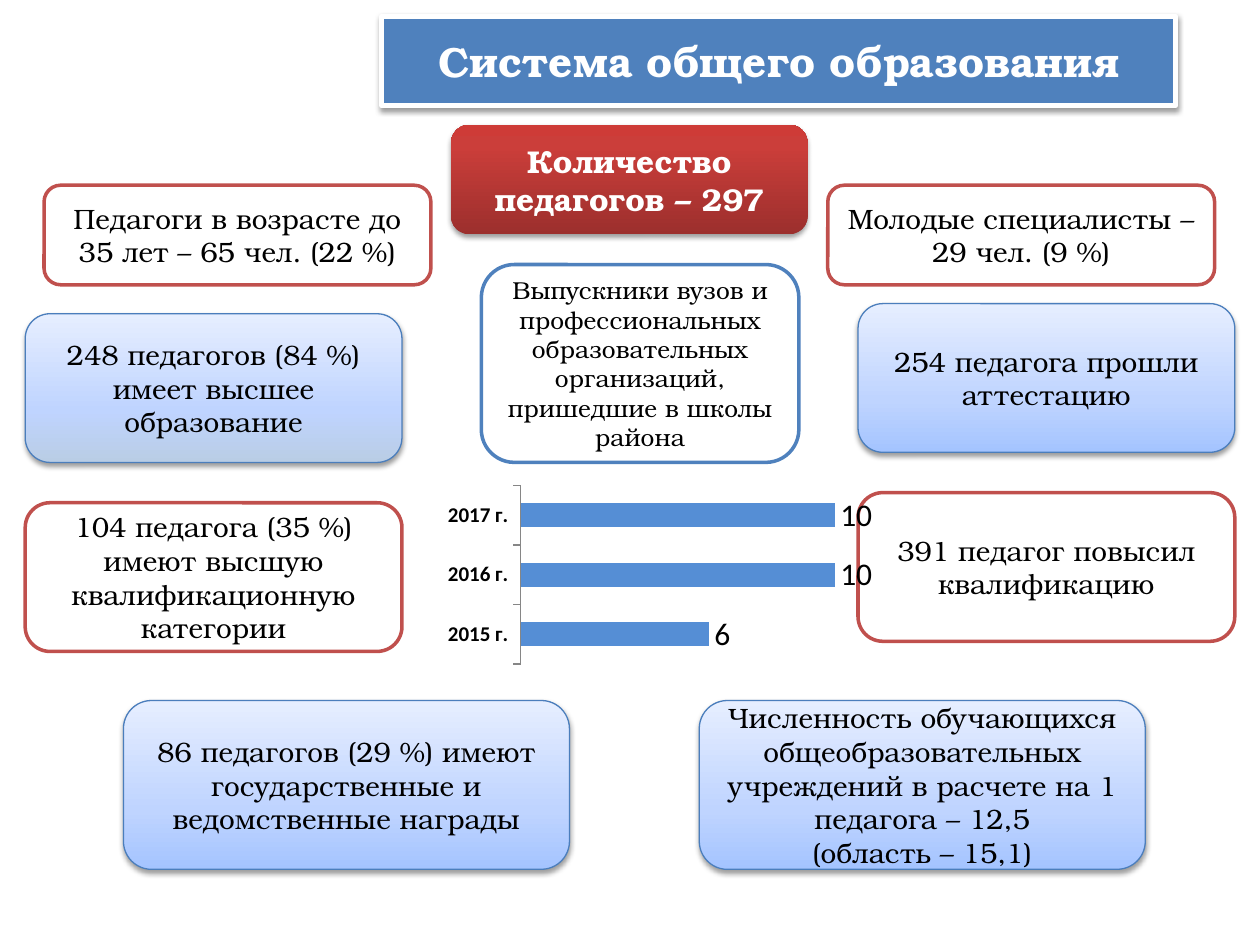
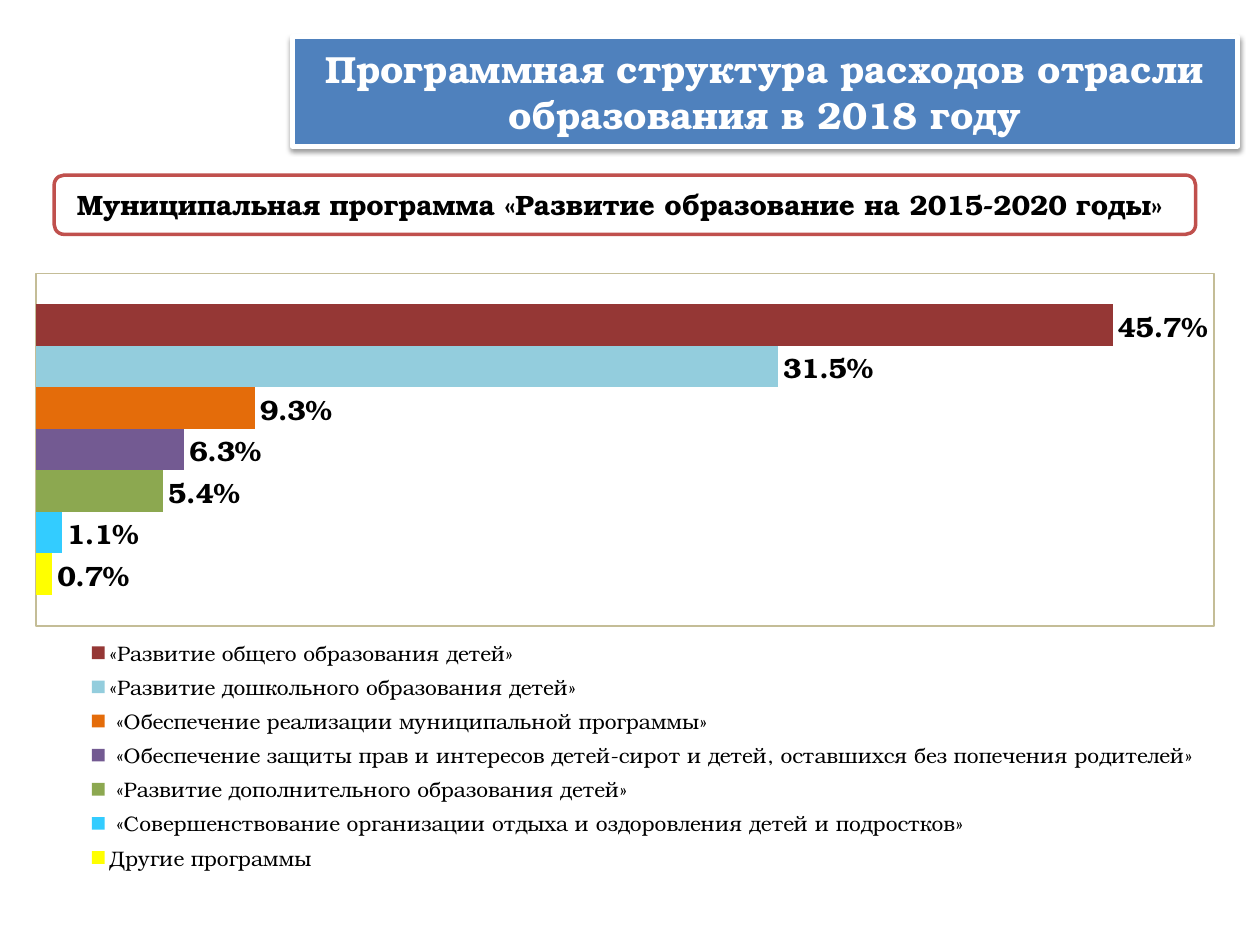
from copy import deepcopy

from lxml.etree import SubElement
from pptx import Presentation
from pptx.chart.data import CategoryChartData
from pptx.dml.color import RGBColor
from pptx.enum.chart import (XL_CHART_TYPE, XL_LABEL_POSITION, XL_LEGEND_POSITION,
                             XL_TICK_LABEL_POSITION, XL_TICK_MARK)
from pptx.enum.shapes import MSO_SHAPE
from pptx.enum.text import MSO_ANCHOR, MSO_AUTO_SIZE, PP_ALIGN
from pptx.oxml import parse_xml
from pptx.oxml.ns import nsdecls, qn
from pptx.util import Inches, Pt

SERIF = "TeX Gyre Bonum"
SANS = "Calibri"
WHITE = RGBColor(0xFF, 0xFF, 0xFF)
BLACK = RGBColor(0x00, 0x00, 0x00)
BLUE = RGBColor(0x4F, 0x81, 0xBD)
EDGE_BLUE = RGBColor(0x4B, 0x7E, 0xBC)
BAR_BLUE = RGBColor(0x55, 0x8E, 0xD5)
RED = RGBColor(0xC0, 0x50, 0x4D)
SKY = RGBColor(0xA4, 0xC4, 0xFF)
STEEL = RGBColor(0xB9, 0xCD, 0xE5)
PALE = RGBColor(0xBF, 0xD4, 0xFF)
MIST = RGBColor(0xE6, 0xEE, 0xFF)
AXIS_GREY = RGBColor(0x86, 0x86, 0x86)
PLOT_EDGE = RGBColor(0xC4, 0xBD, 0x97)

# Gradients run from bottom to top
SKY_GRADIENT = [(0, SKY), (0.35, PALE), (1, MIST)]
STEEL_GRADIENT = [(0, STEEL), (0.35, PALE), (1, MIST)]
RED_GRADIENT = [(0, RGBColor(0x9C, 0x2F, 0x2D)), (0.8, RGBColor(0xCB, 0x3E, 0x3A)),
                (1, RGBColor(0xCE, 0x3B, 0x37))]

# Style: fill, line colour, line width, text colour, bold
STYLES = {
    "red outline": (WHITE, RED, 2, BLACK, False),
    "blue outline": (WHITE, BLUE, 2, BLACK, False),
    "sky": (SKY_GRADIENT, EDGE_BLUE, 0.75, BLACK, False),
    "steel": (STEEL_GRADIENT, EDGE_BLUE, 0.75, BLACK, False),
    "total": (RED_GRADIENT, None, 0, WHITE, True),
    "program": (WHITE, RED, 2, BLACK, True),
}

# Title: text, size, place
STAFF_TITLE = ("Система общего образования", 24, (3.03, 0.13, 6.3, 0.71))
SPENDING_TITLE = ("Программная структура расходов отрасли образования в 2018 году", 21.6,
                  (2.32, 0.29, 7.5, 0.87))

# Card sizes and the left edges they share
SMALL, MEDIUM, LARGE = (3.07, 0.79), (2.99, 1.18), (3.54, 1.34)
LEFT, RIGHT = 0.2, 6.81

# Card: style, left and top, size, text size, paragraphs
STAFF_CARDS = [
    ("red outline", (6.57, 1.47), SMALL, 16, ["Молодые специалисты – 29 чел. (9 %)"]),
    ("sky", (RIGHT, 2.41), MEDIUM, 16, ["254 педагога прошли аттестацию"]),
    ("red outline", (RIGHT, 3.91), MEDIUM, 16, ["391 педагог повысил квалификацию"]),
    ("total", (3.58, 0.99), (2.83, 0.87), 18, ["Количество педагогов – 297"]),
    ("red outline", (0.35, 1.47), SMALL, 16,
     ["Педагоги в возрасте до 35 лет – 65 чел. (22 %)"]),
    ("steel", (LEFT, 2.49), MEDIUM, 16, ["248 педагогов (84 %) имеет высшее образование"]),
    ("red outline", (LEFT, 3.99), MEDIUM, 16,
     ["104 педагога (35 %) имеют высшую квалификационную категории"]),
    ("sky", (0.98, 5.56), LARGE, 16,
     ["86 педагогов (29 %) имеют государственные и ведомственные награды"]),
    ("sky", (5.55, 5.56), LARGE, 16,
     ["Численность обучающихся общеобразовательных учреждений в расчете на 1 педагога – 12,5",
      "(область – 15,1)"]),
    ("blue outline", (3.82, 2.1), (2.52, 1.57), 14,
     ["Выпускники вузов и профессиональных образовательных организаций, "
      "пришедшие в школы района"]),
]
SPENDING_CARDS = [
    ("program", (0.43, 1.39), (9.06, 0.47), 16,
     ["Муниципальная программа «Развитие образование на 2015-2020 годы» "]),
]

GRADUATE_YEARS = ["2015 г.", "2016 г.", "2017 г."]
GRADUATES = [("Выпускники", [6, 10, 10], BAR_BLUE)]
SPENDING = [
    ("Другие программы", [0.007], RGBColor(0xFF, 0xFF, 0x00)),
    (" «Совершенствование организации отдыха и оздоровления детей и подростков»",
     [0.011], RGBColor(0x33, 0xCC, 0xFF)),
    (" «Развитие дополнительного образования детей»", [0.054], RGBColor(0x8C, 0xA8, 0x50)),
    (" «Обеспечение защиты прав и интересов детей-сирот и детей, "
     "оставшихся без попечения родителей»", [0.063], RGBColor(0x73, 0x5A, 0x92)),
    (" «Обеспечение реализации муниципальной программы»",
     [0.093], RGBColor(0xE4, 0x6C, 0x0A)),
    ("«Развитие дошкольного образования детей»", [0.315], RGBColor(0x93, 0xCD, 0xDD)),
    ("«Развитие общего образования детей»", [0.457], RGBColor(0x95, 0x37, 0x35)),
]


def set_font(font, name, size, color=BLACK, bold=False):
    font.name, font.size, font.bold = name, Pt(size), bold
    font.color.rgb = color


def write(shape, paragraphs, size, color, bold):
    frame = shape.text_frame
    frame.word_wrap = True
    frame.auto_size = MSO_AUTO_SIZE.NONE
    frame.vertical_anchor = MSO_ANCHOR.MIDDLE
    for number, text in enumerate(paragraphs):
        paragraph = frame.add_paragraph() if number else frame.paragraphs[0]
        paragraph.alignment = PP_ALIGN.CENTER
        run = paragraph.add_run()
        run.text = text
        set_font(run.font, SERIF, size, color, bold)


def paint(shape, fill, line, width):
    """Fill with a colour or a list of gradient stops, then outline."""
    if isinstance(fill, list):
        shape.fill.gradient()
        shape.fill.gradient_angle = 90
        stop_list = shape.element.spPr.find(qn("a:gradFill")).find(qn("a:gsLst"))
        stop_list.append(deepcopy(stop_list[-1]))
        for stop, (position, color) in zip(shape.fill.gradient_stops, fill):
            stop.position = position
            stop.color.rgb = color
    else:
        shape.fill.solid()
        shape.fill.fore_color.rgb = fill
    if line is None:
        shape.line.fill.background()
    else:
        shape.line.color.rgb = line
        shape.line.width = Pt(width)


def drop_shadow(shape):
    shape.shadow.inherit = False
    effects = shape.element.spPr.find(qn("a:effectLst"))
    shadow = SubElement(effects, qn("a:outerShdw"), blurRad=str(Pt(3.1)), dist=str(Pt(1.6)),
                        dir="5400000", rotWithShape="0")
    SubElement(SubElement(shadow, qn("a:srgbClr"), val="000000"), qn("a:alpha"), val="38000")


def add_titled_slide(deck, text, size, place):
    slide = deck.slides.add_slide(deck.slide_layouts[5])
    title = slide.shapes.title
    title.left, title.top, title.width, title.height = map(Inches, place)
    paint(title, BLUE, WHITE, 3)
    drop_shadow(title)
    write(title, [text], size, WHITE, True)
    return slide


def add_card(slide, style, corner, extent, size, paragraphs):
    fill, line, width, color, bold = STYLES[style]
    card = slide.shapes.add_shape(MSO_SHAPE.ROUNDED_RECTANGLE, *map(Inches, corner + extent))
    paint(card, fill, line, width)
    if isinstance(fill, list):
        drop_shadow(card)
    else:
        card.shadow.inherit = False
    write(card, paragraphs, size, color, bold)


def set_layout(parent, index, fractions, inner=False):
    """Place a chart part by its left, top, width and height as shares of the chart."""
    for old in parent.findall(qn("c:layout")):
        parent.remove(old)
    settings = [("layoutTarget", "inner")] if inner else []
    settings += [("xMode", "edge"), ("yMode", "edge")]
    settings += zip("xywh", fractions)
    body = "".join(f'<c:{tag} val="{value}"/>' for tag, value in settings)
    parent.insert(index, parse_xml(
        f'<c:layout {nsdecls("c")}><c:manualLayout>{body}</c:manualLayout></c:layout>'))


def add_bars(slide, place, categories, series_list, plot_place, maximum, number_format):
    data = CategoryChartData(number_format=number_format)
    data.categories = categories
    for name, values, _ in series_list:
        data.add_series(name, values)
    chart = slide.shapes.add_chart(XL_CHART_TYPE.BAR_CLUSTERED, *map(Inches, place), data).chart
    set_font(chart.font, SANS, 18)
    chart.has_title = False
    chart.has_legend = False
    plot = chart.plots[0]
    plot.gap_width, plot.overlap = 150, 0
    plot.vary_by_categories = False
    for series, (_, _, color) in zip(plot.series, series_list):
        series.format.fill.solid()
        series.format.fill.fore_color.rgb = color
        labels = series.data_labels
        labels.show_value = True
        labels.position = XL_LABEL_POSITION.OUTSIDE_END
        labels.number_format = number_format
        labels.number_format_is_linked = False
    scale = chart.value_axis
    scale.minimum_scale, scale.maximum_scale = 0, maximum
    scale.has_major_gridlines = False
    scale.visible = False
    set_layout(chart.element.chart.plotArea, 0, plot_place, inner=True)
    return chart


def add_graduates_chart(slide):
    chart = add_bars(slide, (3.43, 3.59, 3.7, 1.75), GRADUATE_YEARS, GRADUATES,
                     (0.19, 0.15, 0.81, 0.81), 12, "General")
    years = chart.category_axis
    years.major_tick_mark = XL_TICK_MARK.OUTSIDE
    years.tick_label_position = XL_TICK_LABEL_POSITION.NEXT_TO_AXIS
    years.format.line.color.rgb = AXIS_GREY
    set_font(years.tick_labels.font, SANS, 12, bold=True)


def add_spending_chart(slide):
    chart = add_bars(slide, (0.28, 2.02, 9.45, 5), ["1"], SPENDING,
                     (0, 0.03, 0.99, 0.56), 0.5, "0.0%")
    chart.category_axis.visible = False
    for series in chart.plots[0].series:
        set_font(series.data_labels.font, SERIF, 16, bold=True)
    chart.has_legend = True
    legend = chart.legend
    legend.position = XL_LEGEND_POSITION.RIGHT
    legend.include_in_layout = False
    set_font(legend.font, SERIF, 12)
    set_layout(chart.element.chart.find(qn("c:legend")), 1, (0.03, 0.6, 0.96, 0.39))
    chart.element.chart.plotArea.append(parse_xml(
        f'<c:spPr {nsdecls("c", "a")}><a:noFill/><a:ln w="{Pt(0.75)}"><a:solidFill>'
        f'<a:srgbClr val="{PLOT_EDGE}"/></a:solidFill></a:ln></c:spPr>'))


def main():
    deck = Presentation()
    deck.slide_width, deck.slide_height = Inches(10), Inches(7.5)
    for title, cards, add_chart in [(STAFF_TITLE, STAFF_CARDS, add_graduates_chart),
                                    (SPENDING_TITLE, SPENDING_CARDS, add_spending_chart)]:
        slide = add_titled_slide(deck, *title)
        for card in cards:
            add_card(slide, *card)
        add_chart(slide)
    deck.save("out.pptx")


if __name__ == "__main__":
    main()
